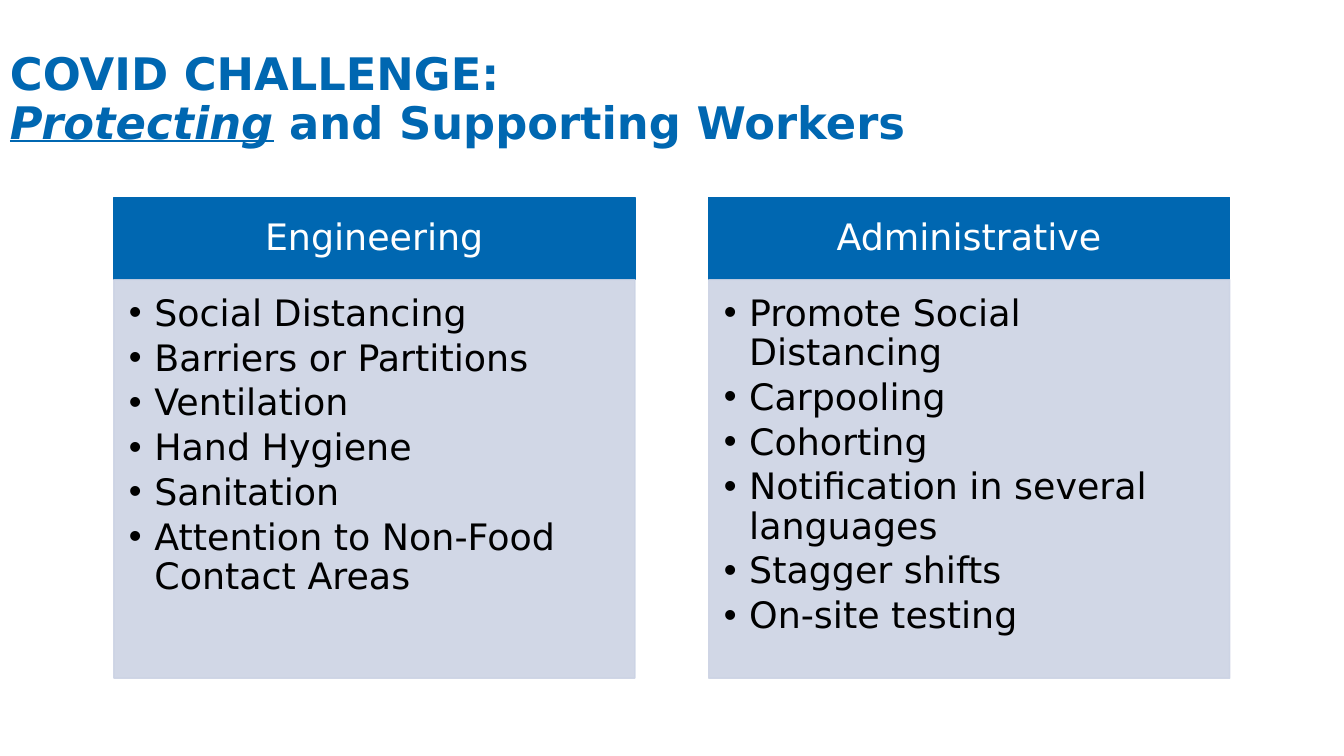
import dataclasses

import lxml.etree
import pptx
import pptx.dml.color
import pptx.enum.text
import pptx.oxml.ns
import pptx.util

Cm = pptx.util.Cm
Pt = pptx.util.Pt
Align = pptx.enum.text.PP_ALIGN
Anchor = pptx.enum.text.MSO_ANCHOR

FONT = "DejaVu Sans"
COLOURS = {"blue": "0067B1", "panel": "CCD3E4", "white": "FFFFFF", "black": "000000"}
COLUMN_WIDTH = Cm(13.13)
HEADER_TOP, HEADER_HEIGHT = Cm(4.97), Cm(2.08)
LIST_HEIGHT = Cm(10.04)
BULLET_INDENT = Cm(0.64)


@dataclasses.dataclass
class Column:
    heading: str
    items: list[str]
    left: float
    header_index: int
    list_index: int


COLUMNS = [
    Column("Engineering",
           ["Social Distancing", "Barriers or Partitions", "Ventilation", "Hand Hygiene",
            "Sanitation", "Attention to Non-Food Contact Areas"],
           2.87, 1, 2),
    Column("Administrative",
           ["Promote Social Distancing", "Carpooling", "Cohorting",
            "Notification in several languages", "Stagger shifts", "On-site testing"],
           17.86, 3, 4),
]


def colour(name: str) -> pptx.dml.color.RGBColor:
    return pptx.dml.color.RGBColor.from_string(COLOURS[name])


def place(box, left: int, top: int, width: int, height: int) -> None:
    box.left, box.top, box.width, box.height = left, top, width, height


def prepare(box, anchor: Anchor, margins: tuple[float, float, float, float]) -> None:
    frame = box.text_frame
    frame.word_wrap = True
    frame.auto_size = pptx.enum.text.MSO_AUTO_SIZE.NONE
    frame.vertical_anchor = anchor
    frame.margin_left, frame.margin_top, frame.margin_right, frame.margin_bottom = map(Cm, margins)


def paint(box, name: str, opacity: int = 100) -> None:
    box.fill.solid()
    box.fill.fore_color.rgb = colour(name)
    box.line.color.rgb = colour(name)
    box.line.width = Pt(1)
    if opacity < 100:
        for tint in box.element.spPr.iter(pptx.oxml.ns.qn("a:srgbClr")):
            alpha = lxml.etree.SubElement(tint, pptx.oxml.ns.qn("a:alpha"))
            alpha.set("val", str(opacity * 1000))


def format_para(para, align: Align, size: int, name: str, bold: bool, space_after: float = 0) -> None:
    para.alignment = align
    para.line_spacing = 0.9
    para.space_before = Pt(0)
    para.space_after = Pt(space_after)
    for span in para.runs:
        span.font.name = FONT
        span.font.size = Pt(size)
        span.font.bold = bold
        span.font.color.rgb = colour(name)


def add_bullet(para) -> None:
    properties = para._p.get_or_add_pPr()
    properties.set("marL", str(BULLET_INDENT))
    properties.set("indent", str(-BULLET_INDENT))
    bullet = lxml.etree.SubElement(properties, pptx.oxml.ns.qn("a:buChar"))
    bullet.set("char", "•")


def draw_title(page) -> None:
    box = page.shapes.title
    place(box, Cm(0), Cm(0.94), Cm(30.48), Cm(3.18))
    prepare(box, Anchor.MIDDLE, (0.25, 0.13, 0.25, 0.13))
    para = box.text_frame.paragraphs[0]
    para.text = "COVID CHALLENGE:\vProtecting"
    para.add_run().text = " and Supporting Workers"
    format_para(para, Align.LEFT, 32, "blue", True)
    emphasis = para.runs[1].font
    emphasis.italic = True
    emphasis.underline = True


def draw_column(page, column: Column) -> None:
    boxes = {box.placeholder_format.idx: box for box in page.placeholders}
    left = Cm(column.left)

    header = boxes[column.header_index]
    place(header, left, HEADER_TOP, COLUMN_WIDTH, HEADER_HEIGHT)
    prepare(header, Anchor.MIDDLE, (0.51, 0.3, 0.51, 0.3))
    paint(header, "blue")
    header.text_frame.text = column.heading
    format_para(header.text_frame.paragraphs[0], Align.CENTER, 26, "white", False)

    panel = boxes[column.list_index]
    place(panel, left, HEADER_TOP + HEADER_HEIGHT, COLUMN_WIDTH, LIST_HEIGHT)
    prepare(panel, Anchor.TOP, (0.38, 0.38, 0.51, 0.58))
    paint(panel, "panel", 90)
    panel.text_frame.text = "\n".join(column.items)
    for para in panel.text_frame.paragraphs:
        add_bullet(para)
        format_para(para, Align.LEFT, 26, "black", False, 3.9)


def main() -> None:
    deck = pptx.Presentation()
    deck.slide_width, deck.slide_height = Cm(33.87), Cm(19.05)
    page = deck.slides.add_slide(deck.slide_layouts.get_by_name("Comparison"))
    draw_title(page)
    for column in COLUMNS:
        draw_column(page, column)
    deck.save("out.pptx")


if __name__ == "__main__":
    main()
